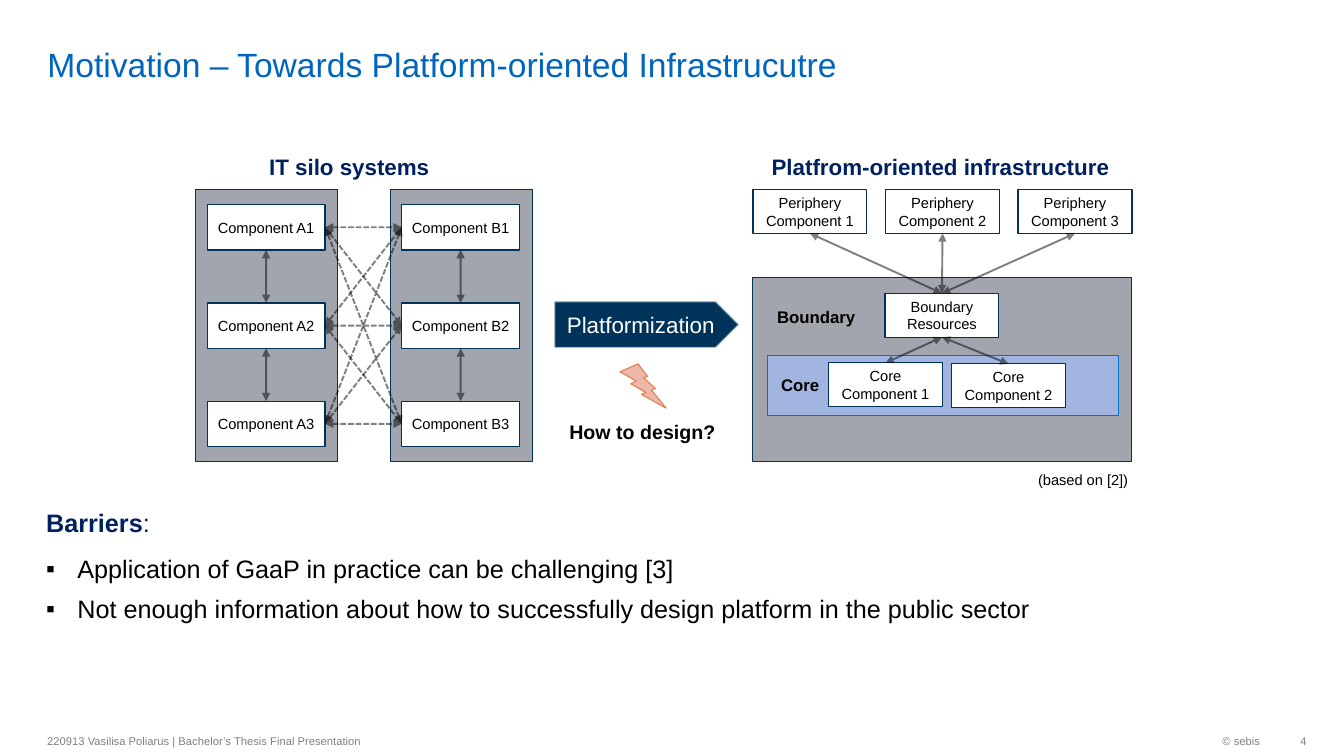
import dataclasses
import itertools
import typing

import lxml.etree
import pptx
import pptx.dml.color
import pptx.enum.dml
import pptx.enum.shapes
import pptx.enum.text
import pptx.oxml.ns
import pptx.util

Pt = pptx.util.Pt
KIND = pptx.enum.shapes.MSO_SHAPE
ALIGN = pptx.enum.text.PP_ALIGN
ANCHOR = pptx.enum.text.MSO_ANCHOR
DASH = pptx.enum.dml.MSO_LINE
qn = pptx.oxml.ns.qn

HUES = {
    "title": "0065BD", "head": "002060", "navy": "003359", "gray": "A2A5AD",
    "core": "A2B5E1", "edge": "0073CF", "bolt": "EDB8AA", "flame": "E37C4D",
    "pale": "F9F9F9", "foot": "808080", "black": "000000", "white": "FFFFFF",
}
TOP, LEFT, BOTTOM, RIGHT = range(4)  # connection sites of a rectangle

# Grid: 133.33 columns by 75 rows
deck = pptx.Presentation()
deck.slide_width, deck.slide_height = pptx.util.Inches(13.333), pptx.util.Inches(7.5)
COL, ROW = deck.slide_width / 133.33, deck.slide_height / 75
slide = deck.slides.add_slide(deck.slide_layouts[5])
shapes = slide.shapes


class Area(typing.NamedTuple):
    col: float
    row: float
    wide: float
    high: float

    def emu(self) -> list[int]:
        return [round(self.col * COL), round(self.row * ROW),
                round(self.wide * COL), round(self.high * ROW)]


@dataclasses.dataclass
class Box:
    area: Area
    text: str = ""
    fill: str = "white"
    line: str = "navy"
    width: float = 0.85
    size: float = 10.5
    ink: str = "black"
    kind: typing.Any = KIND.RECTANGLE


@dataclasses.dataclass
class Label:
    area: Area
    text: str
    size: float
    ink: str = "black"
    bold: bool = False
    align: typing.Any = ALIGN.LEFT
    anchor: typing.Any = ANCHOR.TOP
    wrap: bool = True


def hue(name: str) -> pptx.dml.color.RGBColor:
    return pptx.dml.color.RGBColor.from_string(HUES[name])


def style(font, size: float, ink: str, bold: bool = False) -> None:
    form = {"name": "Arial", "size": Pt(size), "bold": bold}
    for key, value in form.items():
        setattr(font, key, value)
    font.color.rgb = hue(ink)


def write(part, text: str, size: float, ink: str, bold: bool = False) -> None:
    run = part.add_run()
    run.text = text
    style(run.font, size, ink, bold)


def fade(line) -> None:
    tint = line.fill._xPr.find(".//" + qn("a:srgbClr"))
    lxml.etree.SubElement(tint, qn("a:alpha"), val="50000")


def draw(box: Box):
    shape = shapes.add_shape(box.kind, *box.area.emu())
    shape.shadow.inherit = False
    shape.fill.solid()
    shape.fill.fore_color.rgb = hue(box.fill)
    shape.line.color.rgb = hue(box.line)
    shape.line.width = Pt(box.width)
    if box.text:
        frame = shape.text_frame
        frame.word_wrap = True
        frame.vertical_anchor = ANCHOR.MIDDLE
        frame.paragraphs[0].alignment = ALIGN.CENTER
        write(frame.paragraphs[0], box.text, box.size, box.ink)
    return shape


def put(label: Label) -> None:
    frame = shapes.add_textbox(*label.area.emu()).text_frame
    frame.word_wrap = label.wrap
    frame.vertical_anchor = label.anchor
    frame.paragraphs[0].alignment = label.align
    write(frame.paragraphs[0], label.text, label.size, label.ink, label.bold)


def link(start, exit: int, end, entry: int, dash=DASH.SOLID) -> None:
    wire = shapes.add_connector(pptx.enum.shapes.MSO_CONNECTOR.STRAIGHT, 0, 0, 0, 0)
    wire.begin_connect(start, exit)
    wire.end_connect(end, entry)
    wire.line.color.rgb = hue("black")
    wire.line.width = Pt(1.35)
    wire.line.dash_style = dash
    fade(wire.line)
    rim = wire.line._get_or_add_ln()
    for tip in ("a:headEnd", "a:tailEnd"):
        lxml.etree.SubElement(rim, qn(tip), type="triangle")
    lxml.etree.SubElement(rim.getparent(), qn("a:effectLst"))


# Title
title = shapes.title
title.left, title.top, title.width, title.height = Area(3.7, 0.5, 109.9, 7.9).emu()
frame = title.text_frame
frame.vertical_anchor = ANCHOR.BOTTOM
frame.margin_top = frame.margin_bottom = 0
frame.paragraphs[0].alignment = ALIGN.LEFT
write(frame.paragraphs[0], "Motivation – Towards Platform-oriented Infrastrucutre", 24, "title")

# Platform side
draw(Box(Area(74.7, 27.5, 37.6, 18.3), fill="gray", width=0.75))
outer = [draw(Box(Area(74.7 + 13.15 * i, 18.8, 11.3, 4.35), f"Periphery Component {i + 1}"))
         for i in range(3)]
hub = draw(Box(Area(87.8, 29.1, 11.3, 4.35), "Boundary Resources"))
draw(Box(Area(76.1, 35.3, 34.9, 5.9), fill="core", line="edge", width=0.75))
inner = [draw(Box(Area(82.2 + 12.2 * i, 36 + 0.1 * i, 11.3, 4.3), f"Core Component {i + 1}"))
         for i in range(2)]
for box in outer:
    link(box, BOTTOM, hub, TOP)
for box in inner:
    link(hub, BOTTOM, box, TOP)

# Silo side
silos = []
for name, left in (("A", 19.4), ("B", 38.7)):
    draw(Box(Area(left, 18.8, 14.1, 27), fill="gray", width=0.75))
    stack = [draw(Box(Area(left + 1.15, 20.3 + 9.75 * i, 11.7, 4.5), f"Component {name}{i + 1}"))
             for i in range(3)]
    for upper, lower in itertools.pairwise(stack):
        link(upper, BOTTOM, lower, TOP)
    silos.append(stack)
for start, end in itertools.product(*silos):
    link(start, RIGHT, end, LEFT, DASH.SQUARE_DOT)

# Step between both sides
step = draw(Box(Area(55, 29.9, 18.3, 4.6), "Platformization", "navy", "pale", 1.35, 16,
                "white", KIND.PENTAGON))
fade(step.line)
draw(Box(Area(61.5, 36.1, 4.6, 4.4), fill="bolt", line="flame", width=0.75,
         kind=KIND.LIGHTNING_BOLT))

# Labels and footer
MID = ANCHOR.MIDDLE
for label in (
    Label(Area(76.1, 29.9, 13.5, 3), "Boundary", 12, bold=True),
    Label(Area(76.5, 36.7, 7.6, 3), "Core", 12, bold=True),
    Label(Area(55.5, 41.2, 17.4, 3.4), "How to design?", 14, bold=True),
    Label(Area(25.6, 14.7, 18.1, 3.7), "IT silo systems", 16, "head", True, ALIGN.CENTER, wrap=False),
    Label(Area(75.3, 14.7, 36, 3.7), "Platfrom-oriented infrastructure", 16, "head", True,
          ALIGN.CENTER, wrap=False),
    Label(Area(102, 46.2, 11.1, 2.8), "(based on [2])", 10.5, wrap=False),
    Label(Area(3.7, 71.9, 47.3, 3.2), "220913 Vasilisa Poliarus | Bachelor’s Thesis Final Presentation",
          8, "foot", anchor=MID),
    Label(Area(102.6, 71.9, 23.4, 3.2), "© sebis", 8, "foot", align=ALIGN.RIGHT, anchor=MID),
    Label(Area(126, 71.9, 4.6, 3.2), "4", 8, "foot", align=ALIGN.RIGHT, anchor=MID),
):
    put(label)

# Barriers list
frame = shapes.add_textbox(*Area(3.6, 49.7, 109.5, 19).emu()).text_frame
frame.word_wrap = True
head = frame.paragraphs[0]
head.space_after, head.line_spacing = Pt(10), 1.05
write(head, "Barriers", 18, "head", True)
write(head, ":", 18, "head")
for text in ("Application of GaaP in practice can be challenging [3]",
             "Not enough information about how to successfully design platform in the public sector"):
    item = frame.add_paragraph()
    item.space_after, item.line_spacing = Pt(6), 1.05
    form = item._p.get_or_add_pPr()
    dent = round(3.1 * COL)
    form.set("marL", str(dent))
    form.set("indent", str(-dent))
    lxml.etree.SubElement(form, qn("a:buFont"), typeface="Arial")
    lxml.etree.SubElement(form, qn("a:buChar"), char="▪")
    write(item, text, 18, "black")

deck.save("out.pptx")
